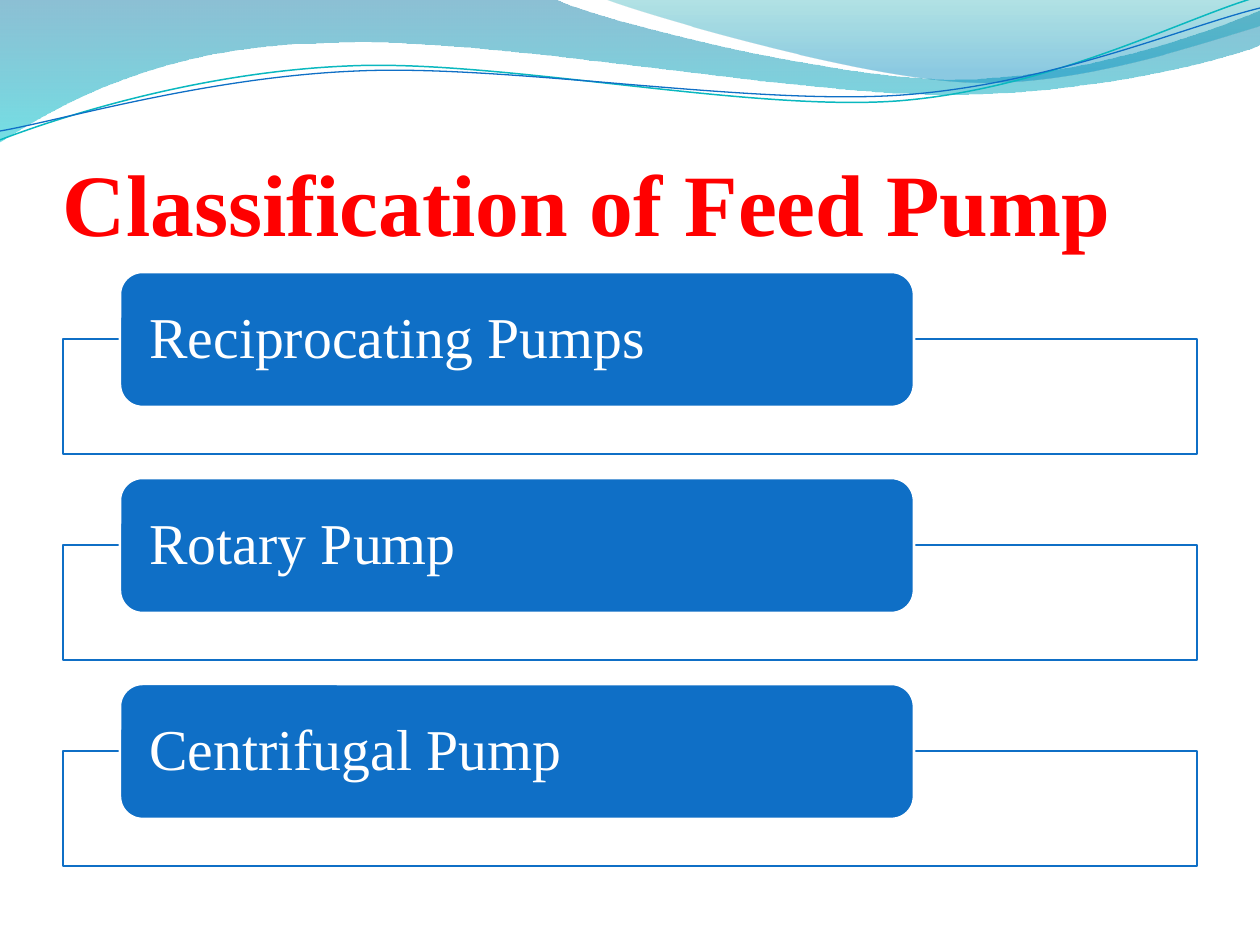
"""Build the slide that classifies feed pumps under a wave banner."""
import math

import pptx
import pptx.dml.color
import pptx.enum.shapes
import pptx.enum.text
import pptx.oxml
import pptx.oxml.ns
import pptx.util

RGBColor = pptx.dml.color.RGBColor
WHITE = RGBColor(0xFF, 0xFF, 0xFF)
RED = RGBColor(0xFF, 0x00, 0x00)
BLUE = RGBColor(0x0F, 0x6F, 0xC6)
TEAL = RGBColor(0x0A, 0xB8, 0xBF)
DEEP_BLUE = RGBColor(0x00, 0x74, 0xA1)
CYAN = RGBColor(0x00, 0xC6, 0xCF)
SEA_GREEN = RGBColor(0x00, 0xA1, 0xA9)
SKY_BLUE = RGBColor(0x00, 0x8B, 0xBF)

FONT = "Times New Roman"
PX = 914400 // 126
RIPPLE_TILT = 357.3
PUMPS = ["Reciprocating Pumps", "Rotary Pump", "Centrifugal Pump"]


def px(*lengths):
    """Turn pixel lengths into EMU."""
    return [pptx.util.Emu(round(length * PX)) for length in lengths]


def set_alphas(shape, *percents):
    """Give the fill colours of a shape their opacities, in order."""
    colors = shape.element.spPr.iter(pptx.oxml.ns.qn("a:srgbClr"))
    for color, percent in zip(colors, percents):
        alpha = color.makeelement(pptx.oxml.ns.qn("a:alpha"), {"val": str(percent * 1000)})
        color.append(alpha)


def write_text(shape, text, *, size, color, bold=False, anchor, insets, line_spacing=1.0):
    """Write one left-aligned paragraph into a shape."""
    frame = shape.text_frame
    frame.word_wrap = True
    frame.vertical_anchor = anchor
    frame.margin_left, frame.margin_top, frame.margin_right, frame.margin_bottom = px(*insets)
    paragraph = frame.paragraphs[0]
    paragraph.alignment = pptx.enum.text.PP_ALIGN.LEFT
    paragraph.line_spacing = line_spacing
    run = paragraph.add_run()
    run.text = text
    run.font.name = FONT
    run.font.size = pptx.util.Pt(size)
    run.font.bold = bold
    run.font.color.rgb = color


def bend_segments(shape, segments):
    """Join each three line steps that stand for a cubic curve into one curve."""
    steps = iter(list(shape.element.spPr.iter(pptx.oxml.ns.qn("a:lnTo"))))
    for segment in segments:
        first = next(steps)
        if len(segment) == 2:
            continue
        curve = first.makeelement(pptx.oxml.ns.qn("a:cubicBezTo"), {})
        first.addprevious(curve)
        for step in (first, next(steps), next(steps)):
            curve.append(step[0])
            step.getparent().remove(step)


def add_outline(slide, box, start, segments, close, rotation=0):
    """Draw an outline of lines and cubic curves, turned about the box centre."""
    left, top, width, height = box
    center_x, center_y = left + width / 2, top + height / 2
    cosine, sine = math.cos(math.radians(rotation)), math.sin(math.radians(rotation))
    points = [start]
    for segment in segments:
        points += zip(segment[::2], segment[1::2])
    offsets = [(x - center_x, y - center_y) for x, y in points]
    points = [px(center_x + x * cosine + y * sine, center_y + y * cosine - x * sine)
              for x, y in offsets]
    builder = slide.shapes.build_freeform(*points[0])
    builder.add_line_segments(points[1:], close=close)
    shape = builder.convert_to_shape()
    shape.shadow.inherit = False
    shape.rotation = rotation
    bend_segments(shape, segments)
    return shape


def add_wave(slide, box, start, segments, stops):
    """Draw a closed wave with a translucent gradient from top to bottom."""
    shape = add_outline(slide, box, start, segments, True)
    shape.line.fill.background()
    shape.fill.gradient()
    shape.fill.gradient_angle = 270
    for stop, (position, color, _) in zip(shape.fill.gradient_stops, stops):
        stop.position = position
        stop.color.rgb = color
    set_alphas(shape, *(percent for _, _, percent in stops))


def add_ripple(slide, box, start, segments, color, width):
    """Draw an open, slightly tilted wavy line."""
    shape = add_outline(slide, box, start, segments, False, RIPPLE_TILT)
    shape.fill.background()
    shape.line.color.rgb = color
    shape.line.width = pptx.util.Pt(width)


def add_banner(slide):
    """Draw the waves and ripples along the top edge."""
    add_wave(slide, (-1, -1, 1262, 143), (-1, -1), [
        (554, -1), (600, 21, 837, 79, 955, 79), (1075, 79, 1207, 33, 1260, 11),
        (1261, 45), (1239, 55, 1096, 96, 940, 94), (784, 94, 481, 35, 324, 43),
        (163, 45, 58, 105, -1, 142),
    ], [(0, DEEP_BLUE, 45), (1, CYAN, 55)])
    add_wave(slide, (604, -1, 656, 88), (604, -1), [
        (641, 14, 859, 78, 969, 82), (1079, 87, 1211, 40, 1260, 26), (1260, -1),
    ], [(0, SEA_GREEN, 30), (0.8, SKY_BLUE, 45)])
    add_ripple(slide, (-3, 28, 1263, 89), (0, 140), [
        (60, 117, 199, 72, 349, 66), (498, 59, 747, 112, 898, 101),
        (1050, 89, 1182, 19, 1257, -3),
    ], TEAL, 0.85)
    add_ripple(slide, (-3, 38, 1264, 73), (0, 131), [
        (59, 121, 207, 77, 357, 71), (508, 64, 752, 106, 903, 95),
        (1053, 84, 1186, 26, 1260, 8),
    ], BLUE, 0.75)


def add_title(slide, box):
    """Place the slide title at the bottom of its box."""
    write_text(slide.shapes.add_textbox(*px(*box)), "Classification of Feed Pump",
               size=50, color=RED, bold=True,
               anchor=pptx.enum.text.MSO_ANCHOR.BOTTOM, insets=(0, 6, 0, 0))


def add_panel(slide, kind, box, fill, line):
    """Add a filled and outlined preset shape."""
    shape = slide.shapes.add_shape(kind, *px(*box))
    shape.shadow.inherit = False
    shape.fill.solid()
    shape.fill.fore_color.rgb = fill
    shape.line.color.rgb = line
    shape.line.width = pptx.util.Pt(1.5)
    return shape


def add_pump_list(slide, box, pumps):
    """Stack one framed label for each pump at an equal pitch."""
    left, top, width, height = box
    frame_height, label_height, overlap = 115, 135, 68
    row_height = label_height - overlap + frame_height
    pitch = (height - row_height) / (len(pumps) - 1)
    kinds = pptx.enum.shapes.MSO_SHAPE
    for index, pump in enumerate(pumps):
        row_top = top + index * pitch
        frame_top = row_top + label_height - overlap
        frame = add_panel(slide, kinds.RECTANGLE,
                          (left, frame_top, width, frame_height), WHITE, BLUE)
        set_alphas(frame, 90)
        label = add_panel(slide, kinds.ROUNDED_RECTANGLE,
                          (left + 57, row_top, 794, label_height), BLUE, WHITE)
        write_text(label, pump, size=33, color=WHITE, line_spacing=0.9,
                   anchor=pptx.enum.text.MSO_ANCHOR.MIDDLE, insets=(23, 0, 23, 0))


def main():
    """Build and save the presentation."""
    presentation = pptx.Presentation()
    presentation.slide_width, presentation.slide_height = px(1260, 945)
    slide = presentation.slides.add_slide(presentation.slide_layouts[6])
    add_banner(slide)
    add_title(slide, (63, 97, 1134, 157))
    add_pump_list(slide, (63, 272, 1134, 594), PUMPS)
    presentation.save("out.pptx")


if __name__ == "__main__":
    main()
